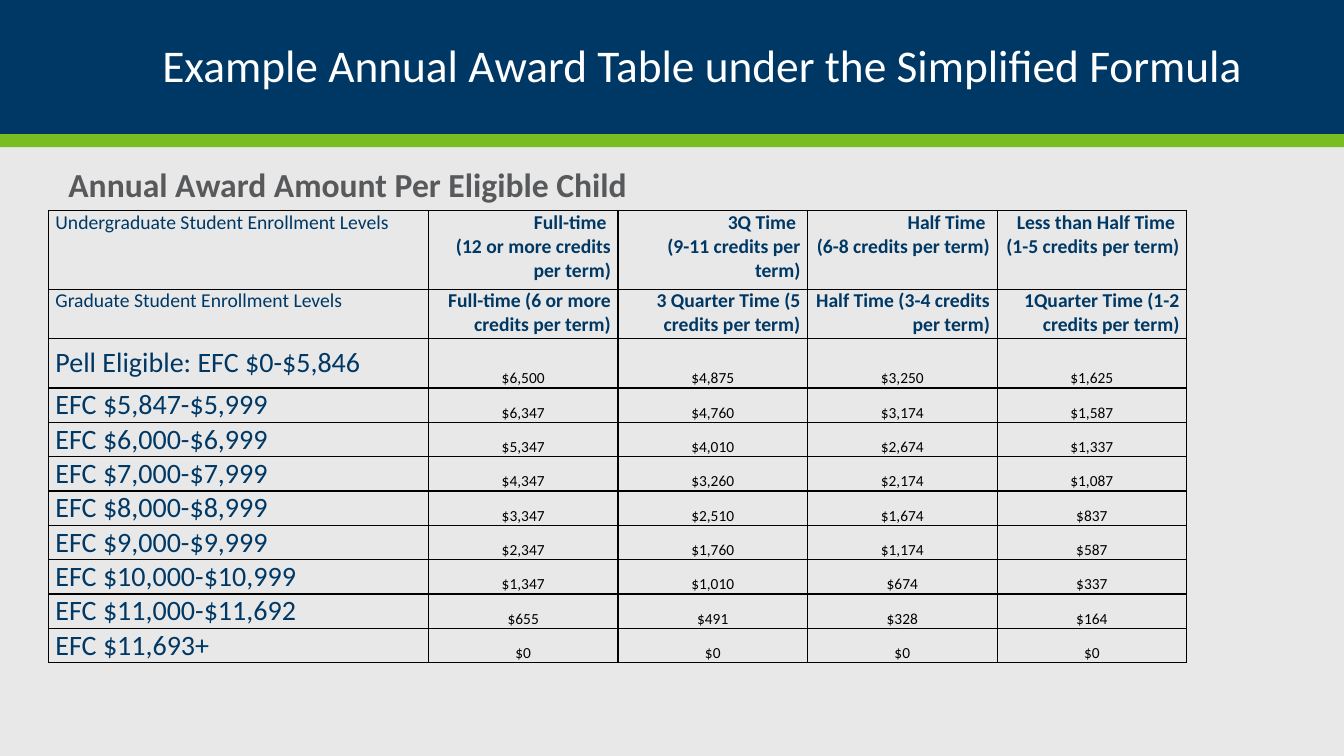
from pptx import Presentation
from pptx.dml.color import RGBColor
from pptx.enum.shapes import MSO_SHAPE as Kind
from pptx.enum.text import MSO_ANCHOR as Anchor, MSO_AUTO_SIZE as Fit, PP_ALIGN as Align
from pptx.oxml import parse_xml
from pptx.oxml.ns import nsdecls
from pptx.util import Inches, Pt

NAVY = "003865"
HEADS = [
    ["Undergraduate Student Enrollment Levels",
     "Full-time \n(12 or more credits per term)",
     "3Q Time \n(9-11 credits per term)",
     "Half Time \n(6-8 credits per term)",
     "Less than Half Time \n(1-5 credits per term)"],
    ["Graduate Student Enrollment Levels",
     "Full-time (6 or more credits per term)",
     "3 Quarter Time (5 credits per term)",
     "Half Time (3-4 credits per term)",
     "1Quarter Time (1-2 credits per term)"],
]
AWARDS = [
    ["Pell Eligible: EFC $0-$5,846", 6500, 4875, 3250, 1625],
    ["EFC $5,847-$5,999", 6347, 4760, 3174, 1587],
    ["EFC $6,000-$6,999", 5347, 4010, 2674, 1337],
    ["EFC $7,000-$7,999", 4347, 3260, 2174, 1087],
    ["EFC $8,000-$8,999", 3347, 2510, 1674, 837],
    ["EFC $9,000-$9,999", 2347, 1760, 1174, 587],
    ["EFC $10,000-$10,999", 1347, 1010, 674, 337],
    ["EFC $11,000-$11,692", 655, 491, 328, 164],
    ["EFC $11,693+", 0, 0, 0, 0],
]


def color(code):
    return RGBColor.from_string(code)


def write(frame, text, size=14, tint=NAVY, bold=False, align=Align.LEFT, space=None):
    frame.text = text
    frame.word_wrap = True
    for para in frame.paragraphs:
        para.alignment = align
        para.line_spacing = space
        font = para.runs[0].font
        font.name = "Calibri"
        font.size = Pt(size)
        font.bold = bold
        font.color.rgb = color(tint)


deck = Presentation()
deck.slide_width, deck.slide_height = Inches(13.33), Inches(7.5)
slide = deck.slides.add_slide(deck.slide_layouts[5])
slide.background.fill.solid()
slide.background.fill.fore_color.rgb = color("E8E8E8")

title = slide.shapes.title
title.left, title.top = Inches(0.92), Inches(0.17)
title.width, title.height = Inches(11.5), Inches(1)
write(title.text_frame, "Example Annual Award Table under the Simplified Formula",
      size=32.4, tint="FFFFFF", align=Align.RIGHT, space=0.9)
title.text_frame.vertical_anchor = Anchor.MIDDLE

for top, height, fill in [(0, 1.33, NAVY), (1.33, 0.13, "78BE21")]:
    band = slide.shapes.add_shape(Kind.RECTANGLE, 0, Inches(top), deck.slide_width, Inches(height))
    band.shadow.inherit = False
    band.fill.solid()
    band.fill.fore_color.rgb = color(fill)
    band.line.fill.background()
    title.element.addprevious(band.element)

rows = HEADS + [[name] + [f"${cash:,}" for cash in sums] for name, *sums in AWARDS]
widths = [3.77] + [1.88] * 4
heights = [0.78, 0.49, 0.49] + [0.32] * 8
grid = slide.shapes.add_table(len(rows), len(widths), Inches(0.48), Inches(2.09),
                              Inches(sum(widths)), Inches(sum(heights))).table
grid.first_row = grid.horz_banding = False
for col, width in zip(grid.columns, widths):
    col.width = Inches(width)
for row, height in zip(grid.rows, heights):
    row.height = Inches(height)

for r, row in enumerate(rows):
    for c, text in enumerate(row):
        cell = grid.cell(r, c)
        head, cash = r < len(HEADS), r >= len(HEADS) and c > 0
        cell.margin_left = cell.margin_right = Inches(0.01 if cash else 0.07)
        cell.margin_top = Inches(0.01 if cash else 0)
        cell.margin_bottom = 0
        if cash:
            write(cell.text_frame, text, size=11, tint="000000", align=Align.CENTER)
            cell.vertical_anchor = Anchor.BOTTOM
        elif head:
            write(cell.text_frame, text, bold=c > 0, align=Align.RIGHT if c else Align.LEFT)
        else:
            write(cell.text_frame, text, size=20)
            cell.vertical_anchor = Anchor.MIDDLE if r == len(HEADS) else Anchor.TOP
        props = cell._tc.get_or_add_tcPr()
        for side in ("lnL", "lnR", "lnT", "lnB"):
            props.append(parse_xml(
                f'<a:{side} {nsdecls("a")} w="12700"><a:solidFill>'
                f'<a:srgbClr val="000000"/></a:solidFill></a:{side}>'))
        cell.fill.background()

label = slide.shapes.add_textbox(Inches(0.58), Inches(1.58), Inches(12.08), Inches(0.5))
write(label.text_frame, "Annual Award Amount Per Eligible Child", size=24, tint="58595B", bold=True)
label.text_frame.auto_size = Fit.SHAPE_TO_FIT_TEXT

deck.save("out.pptx")
